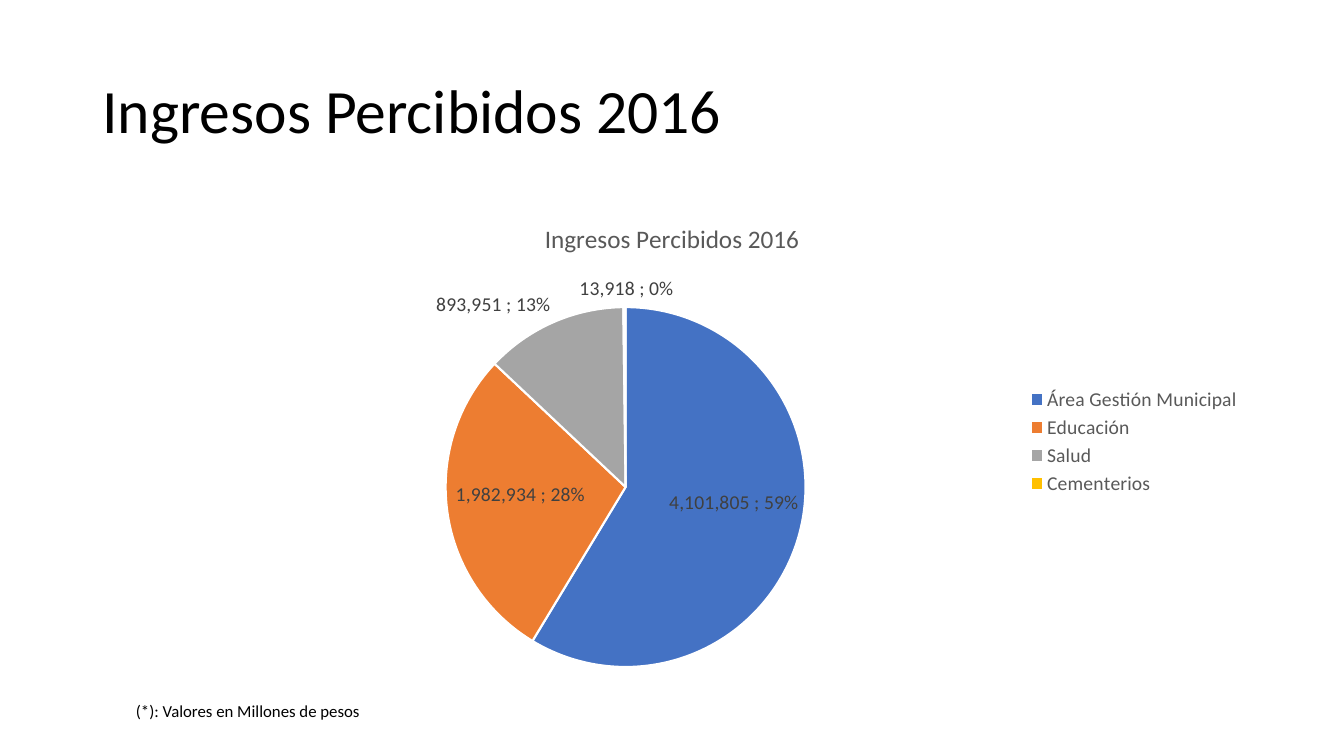
from lxml import etree
from pptx import Presentation
from pptx.chart.data import CategoryChartData
from pptx.dml.color import RGBColor
from pptx.enum.chart import XL_CHART_TYPE, XL_LABEL_POSITION, XL_LEGEND_POSITION
from pptx.enum.text import MSO_ANCHOR, MSO_AUTO_SIZE, PP_ALIGN
from pptx.oxml import parse_xml
from pptx.oxml.ns import nsdecls, qn
from pptx.util import Pt

PIE = XL_CHART_TYPE.PIE
FIT = XL_LABEL_POSITION.BEST_FIT
RIGHT = XL_LEGEND_POSITION.RIGHT
MIDDLE = MSO_ANCHOR.MIDDLE
GROW = MSO_AUTO_SIZE.SHAPE_TO_FIT_TEXT
LEFT = PP_ALIGN.LEFT

PX = 9525
THEME = {
    "face": "Calibri",
    "title": (44, "000000"),
    "head": (18, "595959"),
    "key": (14, "595959"),
    "label": (14, "404040"),
    "note": (12, "000000"),
    "edge": "FFFFFF",
}
NAME = "Ingresos Percibidos 2016"
MONEY = '_(* #,##0_);_(* \\(#,##0\\);_(* "-"_);_(@_)'
AREAS = [
    ("Área Gestión Municipal", 4101805, "4472C4"),
    ("Educación", 1982934, "ED7D31"),
    ("Salud", 893951, "A5A5A5"),
    ("Cementerios", 13918, "FFC000"),
]


def box(*sides):
    return [side * PX for side in sides]


def style(font, role):
    size, color = THEME[role]
    font.name = THEME["face"]
    font.size = Pt(size)
    font.bold = False
    font.color.rgb = RGBColor.from_string(color)


deck = Presentation()
deck.slide_width, deck.slide_height = box(1280, 720)
slide = deck.slides.add_slide(deck.slide_layouts[5])

title = slide.shapes.title
title.left, title.top, title.width, title.height = box(88, 39, 1104, 139)
title.text_frame.text = NAME
title.text_frame.vertical_anchor = MIDDLE
para = title.text_frame.paragraphs[0]
para.alignment = LEFT
para.line_spacing = 0.9
style(para.font, "title")

data = CategoryChartData(number_format=MONEY)
data.categories = [area for area, _, _ in AREAS]
data.add_series(NAME, [value for _, value, _ in AREAS])
chart = slide.shapes.add_chart(PIE, *box(88, 192, 1104, 457), data).chart
chart.font.name = THEME["face"]

chart.has_title = True
chart.chart_title.text_frame.text = NAME
style(chart.chart_title.text_frame.paragraphs[0].font, "head")

chart.has_legend = True
chart.legend.position = RIGHT
chart.legend.include_in_layout = False
style(chart.legend.font, "key")

plot = chart.plots[0]
plot.vary_by_categories = True
series = plot.series[0]
for spot, (_, _, color) in enumerate(AREAS):
    look = series.points[spot].format
    look.fill.solid()
    look.fill.fore_color.rgb = RGBColor.from_string(color)
    look.line.color.rgb = RGBColor.from_string(THEME["edge"])
    look.line.width = Pt(1.5)

labels = series.data_labels
labels.show_value = True
labels.show_percentage = True
labels.position = FIT
labels.number_format = MONEY
labels.number_format_is_linked = True
style(labels.font, "label")
tree = series._element.find(qn("c:dLbls"))
mark = etree.Element(qn("c:separator"))
mark.text = "; "
tree.find(qn("c:showBubbleSize")).addnext(mark)

area = chart._chartSpace.chart.plotArea
for old in area.findall(qn("c:layout")):
    area.remove(old)
frame = {"x": 0.3, "y": 0.22, "w": 0.32, "h": 0.75}
parts = '<c:layoutTarget val="inner"/><c:xMode val="edge"/><c:yMode val="edge"/>'
parts += "".join(f'<c:{key} val="{share}"/>' for key, share in frame.items())
area.insert(0, parse_xml(
    f'<c:layout {nsdecls("c")}><c:manualLayout>{parts}</c:manualLayout></c:layout>'))

note = slide.shapes.add_textbox(*box(120, 663, 235, 29)).text_frame
note.word_wrap = False
note.auto_size = GROW
note.text = "(*): Valores en Millones de pesos"
style(note.paragraphs[0].font, "note")

deck.save("out.pptx")
